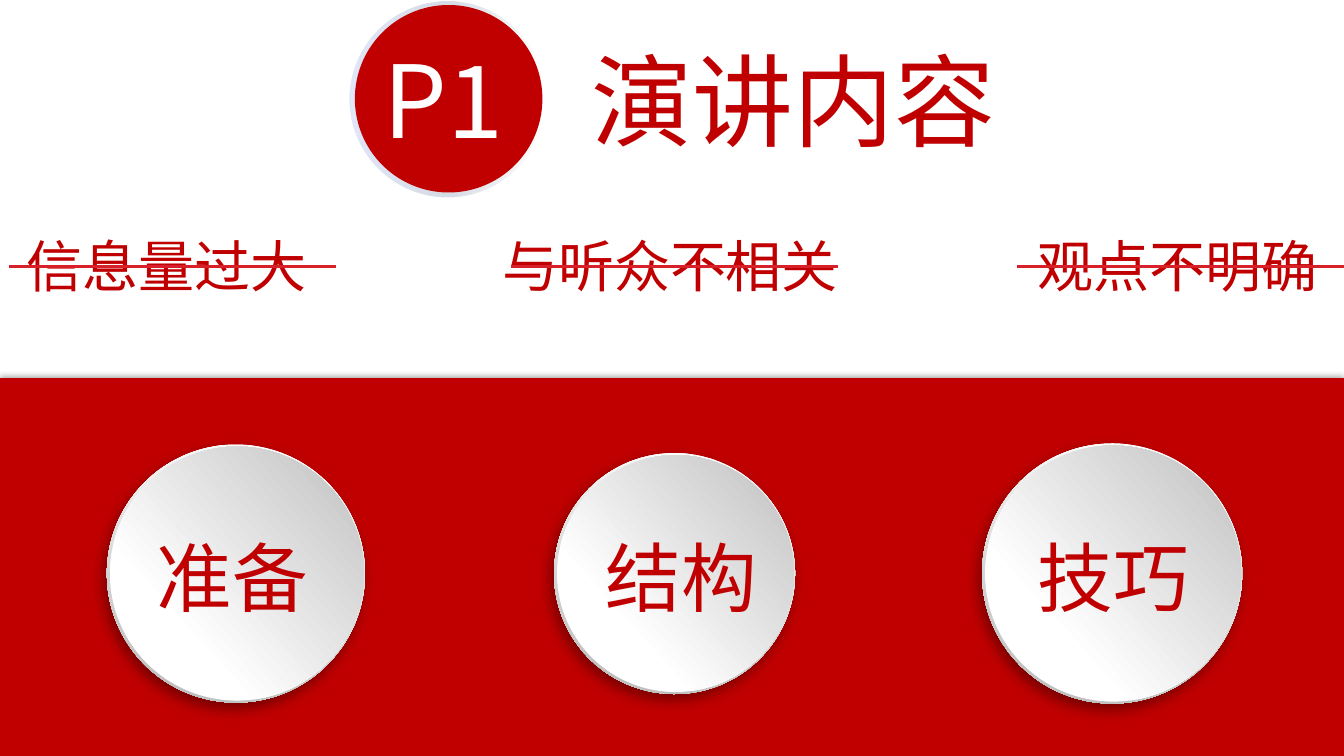
"""Build the P1 section slide: three crossed-out faults above three topic discs."""
from dataclasses import dataclass

import pptx
import pptx.dml.color
import pptx.enum.shapes
import pptx.enum.text
import pptx.oxml.ns
import pptx.util
from lxml import etree

Inches = pptx.util.Inches
MSO_SHAPE = pptx.enum.shapes.MSO_SHAPE
qn = pptx.oxml.ns.qn

FONT = "Noto Sans CJK SC"
COLORS = {
    "red": "C00000", "strike": "D82028", "white": "FFFFFF", "black": "000000",
    "mist": "D6DCE5", "ice": "E0E5F7", "rim": "B8B8B8", "face": "BFBFBF",
}
DISC_CENTER_Y = 5.69


@dataclass
class Label:
    text: str
    left: float
    top: float
    width: float
    height: float
    size: int
    color: str = "red"


@dataclass
class Topic:
    center_x: float
    diameter: float
    label: Label


@dataclass
class Fault:
    label: Label
    strike_left: float


@dataclass
class Shadow:
    opacity: int
    blur: float
    distance: float
    direction: int


BADGE = Label("P1", 3.6, 0.33, 1.59, 1.3, 72, "white")
HEADING = Label("演讲内容", 5.41, 0.33, 4.92, 1.3, 72)
TOPICS = [
    Topic(2.34, 2.56, Label("准备", 1.29, 5.22, 2.03, 1, 54)),
    Topic(6.69, 2.39, Label("结构", 5.74, 5.22, 2.03, 1, 54)),
    Topic(11.03, 2.58, Label("技巧", 10.03, 5.22, 2.03, 1, 54)),
]
FAULTS = [
    Fault(Label("信息量过大", 0.03, 2.25, 3.24, 0.77, 40), 0.09),
    Fault(Label("与听众不相关", 4.74, 2.25, 3.81, 0.77, 40), 5.07),
    Fault(Label("观点不明确", 10.03, 2.25, 3.3, 0.77, 40), 10.09),
]


def rgb(name: str) -> pptx.dml.color.RGBColor:
    """Return the named colour."""
    return pptx.dml.color.RGBColor.from_string(COLORS[name])


def add_plain(slide, kind, left: float, top: float, width: float, height: float):
    """Add a shape without outline or shadow."""
    shape = slide.shapes.add_shape(
        kind, Inches(left), Inches(top), Inches(width), Inches(height))
    shape.line.fill.background()
    shape.shadow.inherit = False
    return shape


def add_circle(slide, center_x: float, center_y: float, diameter: float):
    """Add a plain circle around a centre."""
    return add_plain(slide, MSO_SHAPE.OVAL, center_x - diameter / 2,
                     center_y - diameter / 2, diameter, diameter)


def fill_solid(shape, color: str) -> None:
    """Fill a shape with one colour."""
    shape.fill.solid()
    shape.fill.fore_color.rgb = rgb(color)


def fill_gradient(shape, stops: list[tuple[int, str]], clockwise: int) -> None:
    """Fill a shape with a linear gradient of percent stops."""
    shape.fill.gradient()
    shape.fill.gradient_angle = -clockwise % 360
    stop_list = shape.element.spPr.find(".//" + qn("a:gsLst"))
    for old_stop in list(stop_list):
        stop_list.remove(old_stop)
    for percent, color in stops:
        stop = etree.SubElement(stop_list, qn("a:gs"), pos=str(percent * 1000))
        etree.SubElement(stop, qn("a:srgbClr"), val=COLORS[color])


def cast_shadow(shape, shadow: Shadow) -> None:
    """Give a shape a soft black outer shadow."""
    effects = shape.element.spPr.find(qn("a:effectLst"))
    outer = etree.SubElement(
        effects, qn("a:outerShdw"), blurRad=str(pptx.util.Pt(shadow.blur)),
        dist=str(pptx.util.Pt(shadow.distance)), dir=str(shadow.direction * 60000),
        algn="ctr", rotWithShape="0")
    tone = etree.SubElement(outer, qn("a:srgbClr"), val=COLORS["black"])
    etree.SubElement(tone, qn("a:alpha"), val=str(shadow.opacity * 1000))


def write_label(holder, label: Label) -> None:
    """Place a text holder and write its centred label."""
    holder.left, holder.top = Inches(label.left), Inches(label.top)
    holder.width, holder.height = Inches(label.width), Inches(label.height)
    frame = holder.text_frame
    frame.text = label.text
    frame.word_wrap = True
    frame.auto_size = pptx.enum.text.MSO_AUTO_SIZE.SHAPE_TO_FIT_TEXT
    frame.vertical_anchor = pptx.enum.text.MSO_ANCHOR.TOP
    paragraph = frame.paragraphs[0]
    paragraph.alignment = pptx.enum.text.PP_ALIGN.CENTER
    font = paragraph.runs[0].font
    font.size = pptx.util.Pt(label.size)
    font.color.rgb = rgb(label.color)
    font.name = FONT
    properties = paragraph.runs[0]._r.get_or_add_rPr()
    etree.SubElement(properties, qn("a:ea"), typeface=FONT)


def add_label(slide, label: Label) -> None:
    """Add a text box for a label."""
    write_label(slide.shapes.add_textbox(0, 0, 0, 0), label)


def add_badge(slide) -> None:
    """Draw the section number in its ringed circle."""
    ring = add_circle(slide, 4.44, 0.985, 1.97)
    fill_gradient(ring, [(0, "white"), (50, "mist"), (100, "ice")], 180)
    ring.line.color.rgb = rgb("white")
    ring.line.width = pptx.util.Pt(1.5)
    fill_solid(add_circle(slide, 4.45, 0.98, 1.86), "red")
    add_label(slide, BADGE)


def add_topic(slide, topic: Topic) -> None:
    """Draw a raised disc with its topic."""
    rim = add_circle(slide, topic.center_x, DISC_CENTER_Y, topic.diameter)
    rim.rotation = 62.3
    fill_gradient(rim, [(17, "white"), (88, "rim")], 45)
    cast_shadow(rim, Shadow(39, 10, 5, 123))
    face = add_circle(slide, topic.center_x + 0.01, DISC_CENTER_Y, topic.diameter - 0.04)
    face.rotation = 273
    fill_gradient(face, [(29, "white"), (98, "face")], 45)
    add_label(slide, topic.label)


def add_fault(slide, fault: Fault) -> None:
    """Write a fault and cross it out."""
    add_label(slide, fault.label)
    strike = slide.shapes.add_connector(
        pptx.enum.shapes.MSO_CONNECTOR.STRAIGHT, Inches(fault.strike_left),
        Inches(2.64), Inches(fault.strike_left + 3.24), Inches(2.64))
    strike.line.color.rgb = rgb("strike")
    strike.line.width = pptx.util.Pt(2.25)
    etree.SubElement(strike._element.spPr, qn("a:effectLst"))


def main() -> None:
    """Build and save the slide."""
    deck = pptx.Presentation()
    deck.slide_width, deck.slide_height = Inches(13.33), Inches(7.5)
    slide = deck.slides.add_slide(deck.slide_layouts[5])
    write_label(slide.shapes.title, HEADING)
    add_badge(slide)
    band = add_plain(slide, MSO_SHAPE.RECTANGLE, 0, 3.75, 13.33, 3.75)
    fill_solid(band, "red")
    cast_shadow(band, Shadow(40, 5, 0, 0))
    for topic in TOPICS:
        add_topic(slide, topic)
    for fault in FAULTS:
        add_fault(slide, fault)
    deck.save("out.pptx")


if __name__ == "__main__":
    main()
